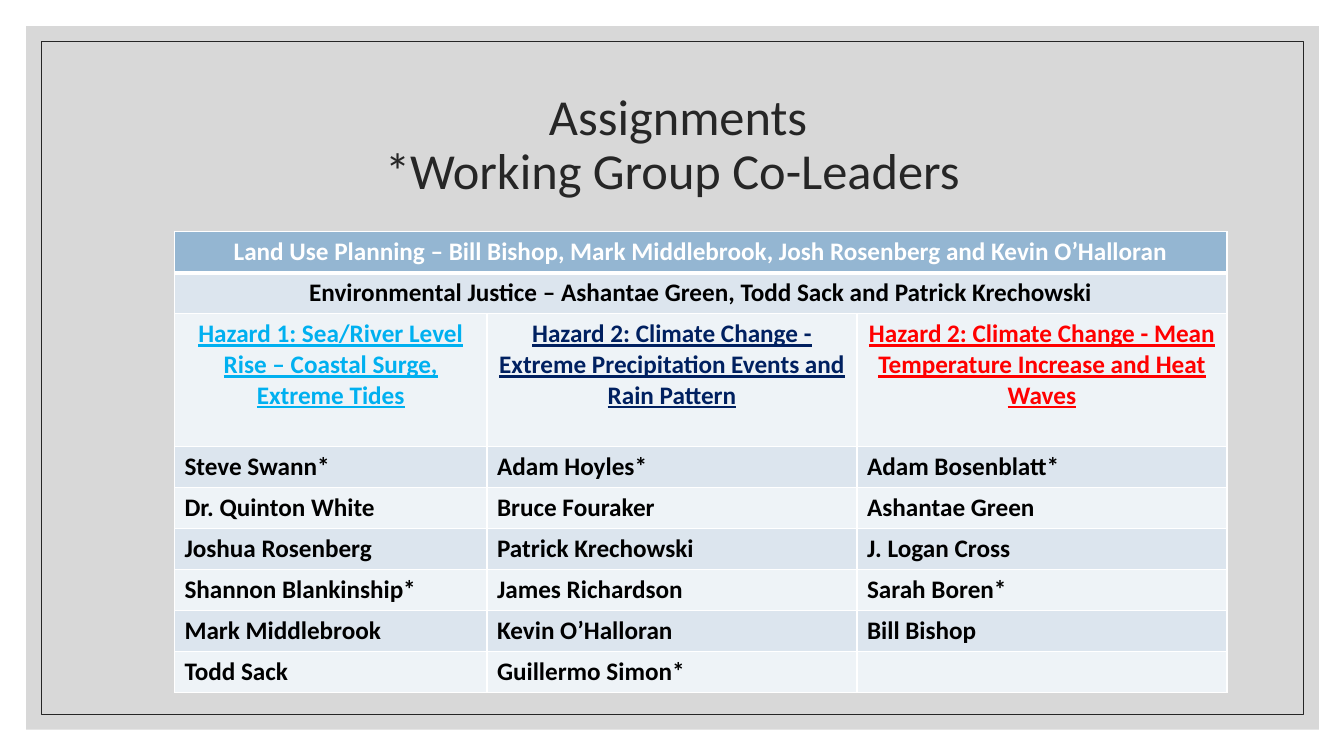
from lxml import etree
from pptx import Presentation
from pptx.dml.color import RGBColor
from pptx.enum import shapes, text
from pptx.oxml.ns import qn
from pptx.util import Inches, Pt

FONT = "Calibri"
WHITE = RGBColor(0xFF, 0xFF, 0xFF)
BLACK = RGBColor(0x00, 0x00, 0x00)
CHARCOAL = RGBColor(0x26, 0x26, 0x26)
PANEL_GRAY = RGBColor(0xBF, 0xBF, 0xBF)
HEADER_BLUE = RGBColor(0x94, 0xB6, 0xD2)
BAND_DARK = RGBColor(0xDC, 0xE5, 0xEE)
BAND_LIGHT = RGBColor(0xEE, 0xF3, 0xF7)
SKY = RGBColor(0x00, 0xB0, 0xF0)
NAVY = RGBColor(0x00, 0x20, 0x60)
RED = RGBColor(0xFF, 0x00, 0x00)

TITLE = " Assignments\v*Working Group Co-Leaders"
BANNERS = [
    ("Land Use Planning – Bill Bishop, Mark Middlebrook, Josh Rosenberg and Kevin O’Halloran", WHITE),
    ("Environmental Justice – Ashantae Green, Todd Sack and Patrick Krechowski", BLACK),
]
HAZARDS = [
    ("Hazard 1: Sea/River Level Rise – Coastal Surge, Extreme Tides", SKY),
    ("Hazard 2: Climate Change - Extreme Precipitation Events and Rain Pattern", NAVY),
    ("Hazard 2: Climate Change - Mean Temperature Increase and Heat Waves", RED),
]
MEMBERS = [
    ("Steve Swann*", "Adam Hoyles*", "Adam Bosenblatt*"),
    ("Dr. Quinton White", "Bruce Fouraker", "Ashantae Green"),
    ("Joshua Rosenberg", "Patrick Krechowski", "J. Logan Cross"),
    ("Shannon Blankinship*", "James Richardson", "Sarah Boren*"),
    ("Mark Middlebrook", "Kevin O’Halloran", "Bill Bishop"),
    ("Todd Sack", "Guillermo Simon*", ""),
]
COLUMN_WIDTHS = (3.1, 3.67, 3.67)
ROW_HEIGHT = 0.407
HAZARD_ROW_HEIGHT = 1.32


def add_rectangle(slide, left, top, width, height):
    shape = slide.shapes.add_shape(
        shapes.MSO_SHAPE.RECTANGLE, Inches(left), Inches(top), Inches(width), Inches(height))
    shape.shadow.inherit = False
    return shape


def add_background(slide):
    # Translucent gray panel
    panel = add_rectangle(slide, 0.26, 0.26, 12.82, 6.98)
    panel.fill.solid()
    panel.fill.fore_color.rgb = PANEL_GRAY
    panel.line.fill.background()
    color = panel.fill._xPr.find(".//" + qn("a:srgbClr"))
    etree.SubElement(color, qn("a:alpha"), val="60000")

    # Thin inner frame
    frame = add_rectangle(slide, 0.41, 0.41, 12.52, 6.68)
    frame.fill.background()
    frame.line.color.rgb = CHARCOAL
    frame.line.width = Pt(0.5)


def style_paragraph(paragraph, size, color, centered, bold=False, underline=False):
    paragraph.alignment = text.PP_ALIGN.CENTER if centered else text.PP_ALIGN.LEFT
    font = paragraph.font
    font.name = FONT
    font.size = Pt(size)
    font.color.rgb = color
    font.bold = bold
    font.underline = underline


def add_title(slide):
    box = slide.shapes.add_textbox(Inches(1.17), Inches(0.7), Inches(11), Inches(1.5))
    frame = box.text_frame
    frame.word_wrap = True
    frame.vertical_anchor = text.MSO_ANCHOR.MIDDLE
    paragraph = frame.paragraphs[0]
    paragraph.text = TITLE
    paragraph.line_spacing = 0.9
    style_paragraph(paragraph, 36, CHARCOAL, centered=True)


def set_borders(cell, bottom_width):
    properties = cell._tc.get_or_add_tcPr()
    for side, width in (("L", 1), ("R", 1), ("T", 1), ("B", bottom_width)):
        line = etree.SubElement(properties, qn("a:ln" + side), w=str(Pt(width)))
        fill = etree.SubElement(line, qn("a:solidFill"))
        etree.SubElement(fill, qn("a:srgbClr"), val=str(WHITE))


def write_cell(cell, content, color, centered=False, underline=False):
    paragraph = cell.text_frame.paragraphs[0]
    paragraph.text = content
    style_paragraph(paragraph, 18, color, centered, bold=True, underline=underline)


def add_assignments(slide):
    row_count = len(BANNERS) + 1 + len(MEMBERS)
    hazard_row = len(BANNERS)
    heights = [ROW_HEIGHT] * row_count
    heights[hazard_row] = HAZARD_ROW_HEIGHT
    table = slide.shapes.add_table(
        row_count, len(COLUMN_WIDTHS), Inches(1.73), Inches(2.3),
        Inches(sum(COLUMN_WIDTHS)), Inches(sum(heights))).table
    for column, width in zip(table.columns, COLUMN_WIDTHS):
        column.width = Inches(width)

    # Row heights, borders and banded fills
    for index, row in enumerate(table.rows):
        row.height = Inches(heights[index])
        band = HEADER_BLUE if index == 0 else (BAND_DARK if index % 2 else BAND_LIGHT)
        for cell in row.cells:
            set_borders(cell, 3 if index == 0 else 1)
            cell.fill.solid()
            cell.fill.fore_color.rgb = band

    # Full-width banners
    for index, (content, color) in enumerate(BANNERS):
        banner = table.cell(index, 0)
        banner.merge(table.cell(index, len(COLUMN_WIDTHS) - 1))
        write_cell(banner, content, color, centered=True)

    # Hazard headings
    for column, (content, color) in enumerate(HAZARDS):
        write_cell(table.cell(hazard_row, column), content, color, centered=True, underline=True)

    # Working group members
    for index, names in enumerate(MEMBERS, start=hazard_row + 1):
        for column, name in enumerate(names):
            write_cell(table.cell(index, column), name, BLACK)


def main():
    presentation = Presentation()
    presentation.slide_width = Inches(13.33)
    presentation.slide_height = Inches(7.5)
    slide = presentation.slides.add_slide(presentation.slide_layouts[6])
    add_background(slide)
    add_title(slide)
    add_assignments(slide)
    presentation.save("out.pptx")


if __name__ == "__main__":
    main()
